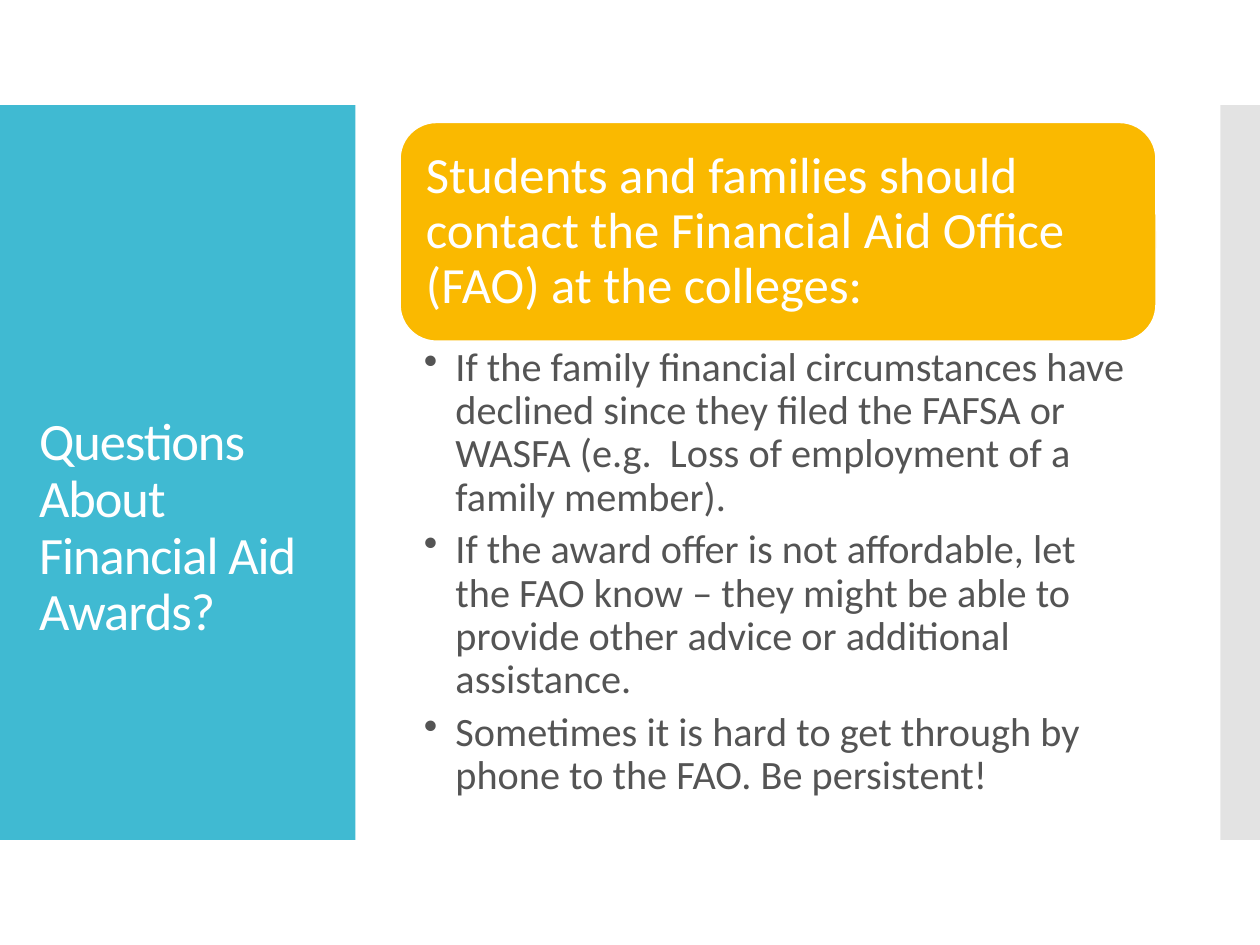
from lxml import etree
from pptx import Presentation
from pptx.dml.color import RGBColor
from pptx.enum.shapes import MSO_SHAPE
from pptx.enum.text import MSO_ANCHOR, MSO_AUTO_SIZE, PP_ALIGN
from pptx.oxml.ns import qn
from pptx.util import Pt

RECTANGLE, ROUNDED = MSO_SHAPE.RECTANGLE, MSO_SHAPE.ROUNDED_RECTANGLE
TOP, MIDDLE = MSO_ANCHOR.TOP, MSO_ANCHOR.MIDDLE
LEFT, NO_FIT = PP_ALIGN.LEFT, MSO_AUTO_SIZE.NONE
WHITE = RGBColor(0xFF, 0xFF, 0xFF)
TEAL = RGBColor(0x40, 0xBA, 0xD2)
GRAY = RGBColor(0xC8, 0xC8, 0xC8)
AMBER = RGBColor(0xFA, 0xB9, 0x00)
DARK = RGBColor(0x54, 0x54, 0x54)
FONT = "Calibri"

HEADING = "Questions About Financial Aid Awards?"
ADVICE = "Students and families should contact the Financial Aid Office (FAO) at the colleges:"
REASONS = [
    "If the family financial circumstances have declined since they filed the FAFSA or "
    "WASFA (e.g.  Loss of employment of a family member).",
    "If the award offer is not affordable, let the FAO know – they might be able to "
    "provide other advice or additional assistance.",
    "Sometimes it is hard to get through by phone to the FAO. Be persistent!",
]

SLIDE_W, SLIDE_H = 720, 540
BAND_TOP, BAND_H = 60, 420
TEAL_W, GRAY_W = 203.2, 22.6
COLUMN_LEFT, COLUMN_W = 228.6, 432
ADVICE_TOP, ADVICE_H, REASONS_H = 70, 125, 274
INDENT = 18


def lengths(*values):
    return [Pt(value) for value in values]


def add_block(slide, preset, box, color):
    block = slide.shapes.add_shape(preset, *lengths(*box))
    block.shadow.inherit = False
    block.fill.solid()
    block.fill.fore_color.rgb = color
    block.line.fill.background()
    return block


def write(frame, texts, size, color, anchor, margins, space_after=0, bulleted=False):
    sides = ("margin_left", "margin_top", "margin_right", "margin_bottom")
    settings = dict(zip(sides, lengths(*margins)),
                    word_wrap=True, auto_size=NO_FIT, vertical_anchor=anchor)
    for name, value in settings.items():
        setattr(frame, name, value)
    for index, text in enumerate(texts):
        paragraph = frame.add_paragraph() if index else frame.paragraphs[0]
        paragraph.text = text
        if bulleted:
            add_bullet(paragraph)
        layout = {"alignment": LEFT, "line_spacing": 0.9,
                  "space_before": Pt(0), "space_after": Pt(space_after)}
        for name, value in layout.items():
            setattr(paragraph, name, value)
        font = paragraph.runs[0].font
        for name, value in {"name": FONT, "size": Pt(size)}.items():
            setattr(font, name, value)
        font.color.rgb = color


def add_bullet(paragraph):
    paragraph.level = 1
    properties = paragraph._p.get_or_add_pPr()
    properties.set("marL", str(Pt(INDENT)))
    properties.set("indent", str(-Pt(INDENT)))
    etree.SubElement(properties, qn("a:buChar"), char="•")


def main():
    deck = Presentation()
    deck.slide_width, deck.slide_height = lengths(SLIDE_W, SLIDE_H)
    slide = deck.slides.add_slide(deck.slide_layouts[5])

    add_block(slide, RECTANGLE, (0, BAND_TOP, TEAL_W, BAND_H), TEAL)
    edge = add_block(slide, RECTANGLE, (SLIDE_W - GRAY_W, BAND_TOP, GRAY_W, BAND_H), GRAY)
    gray = edge.fill._xPr.find(".//" + qn("a:srgbClr"))
    etree.SubElement(gray, qn("a:alpha"), val="50000")

    title = slide.shapes.title
    title.element.getparent().append(title.element)
    title.left, title.top, title.width, title.height = lengths(15.12, 88.56, 174.24, 362.16)
    write(title.text_frame, [HEADING], 30, WHITE, MIDDLE, (7.2, 68.6, 7.2, 3.6))
    title.text_frame.paragraphs[0].runs[0].font._element.set("spc", "-60")

    advice = add_block(slide, ROUNDED, (COLUMN_LEFT, ADVICE_TOP, COLUMN_W, ADVICE_H), AMBER)
    advice.line.color.rgb = WHITE
    advice.line.width = Pt(0.85)
    write(advice.text_frame, [ADVICE], 29, WHITE, MIDDLE, (8.7, 8.7, 8.7, 8.7))

    reasons = slide.shapes.add_textbox(
        *lengths(COLUMN_LEFT, ADVICE_TOP + ADVICE_H, COLUMN_W, REASONS_H))
    write(reasons.text_frame, REASONS, 23, DARK, TOP, (13.7, 2.9, 16.5, 2.9),
          space_after=5, bulleted=True)

    deck.save("out.pptx")


if __name__ == "__main__":
    main()
